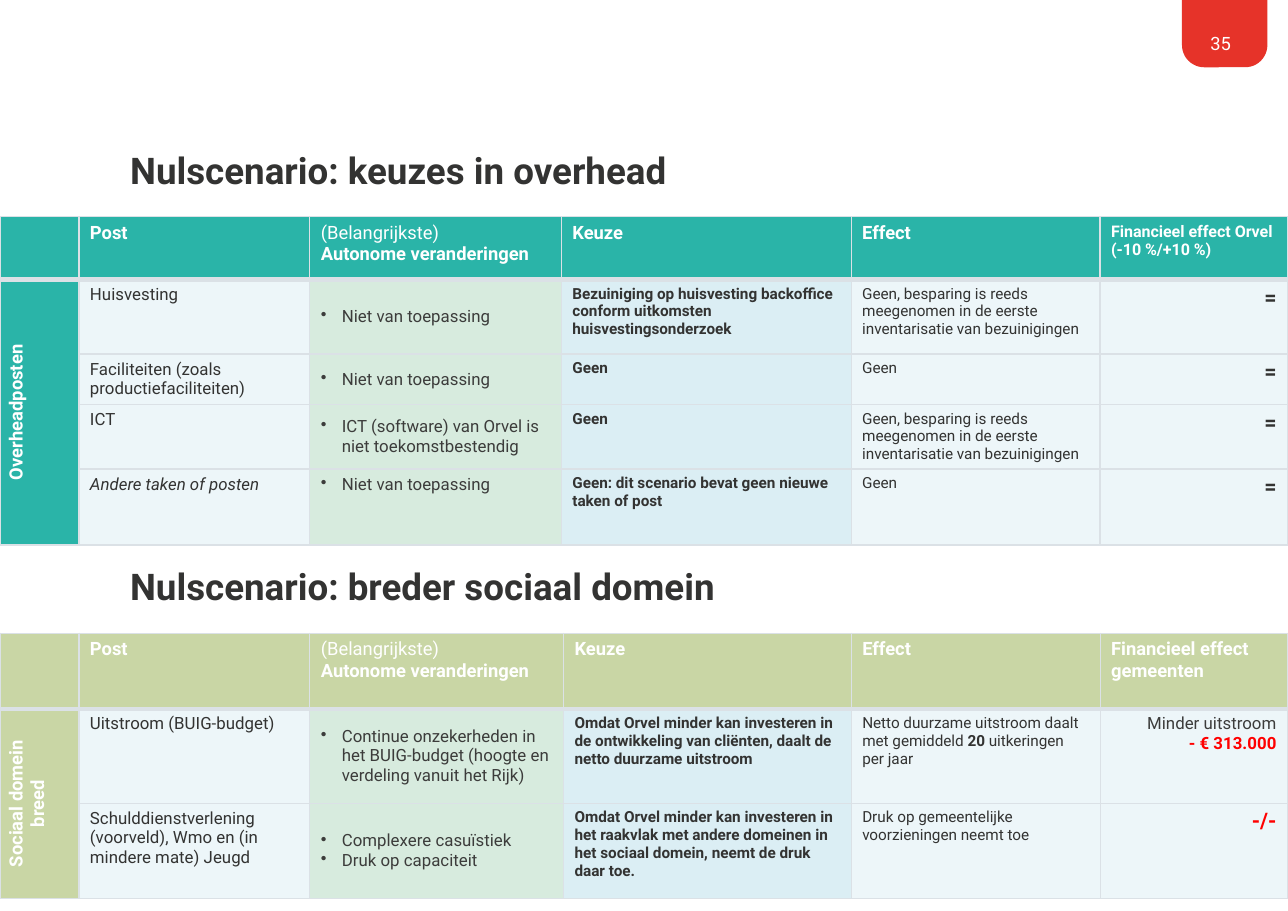
from dataclasses import dataclass

from lxml import etree
from pptx import Presentation, util as u
from pptx.dml.color import RGBColor
from pptx.enum import shapes, text
from pptx.oxml import ns


@dataclass(frozen=True)
class Theme:
    font: str = "Roboto"
    red: str = "E63329"
    loss: str = "FF0000"
    white: str = "FFFFFF"
    ink: str = "333332"
    soft_ink: str = "3C3C3B"
    teal: str = "2AB4A8"
    olive: str = "C9D6A5"
    pale: str = "EDF6F9"
    mint: str = "D7EBDE"
    sky: str = "DBEEF4"
    rule: str = "DBE1E6"
    title: float = 24
    head: float = 12
    small_head: float = 10.5
    item: float = 11
    detail: float = 10
    sign: float = 14


theme = Theme()
LEFT, CENTER, RIGHT = text.PP_ALIGN.LEFT, text.PP_ALIGN.CENTER, text.PP_ALIGN.RIGHT
TOP, MIDDLE, BOTTOM = text.MSO_ANCHOR.TOP, text.MSO_ANCHOR.MIDDLE, text.MSO_ANCHOR.BOTTOM


def write(frame, paras, style):
    """Fill a frame; a para is a string or a list of (text, changes) spans."""
    for index, spans in enumerate(paras):
        para = frame.paragraphs[0] if index == 0 else frame.add_paragraph()
        para.alignment = style.get("align", LEFT)
        if style.get("bullet"):
            props = para._p.get_or_add_pPr()
            props.set("marL", str(u.Pt(13.7)))
            props.set("indent", str(-u.Pt(13.7)))
            etree.SubElement(props, ns.qn("a:buChar")).set("char", "•")
        for wording, changes in [(spans, {})] if isinstance(spans, str) else spans:
            look = style | changes
            span = para.add_run()
            span.text = wording.rstrip("\n")
            if wording.endswith("\n"):
                para.add_line_break()
            values = {"name": theme.font, "size": u.Pt(look["size"]),
                      "bold": look.get("bold", False), "italic": look.get("italic", False)}
            for name, value in values.items():
                setattr(span.font, name, value)
            span.font.color.rgb = RGBColor.from_string(look["color"])


def dress(cell, fill, rules):
    """Give a cell its fill and its left, right, top and bottom rules."""
    cell.fill.solid()
    cell.fill.fore_color.rgb = RGBColor.from_string(fill)
    props = cell._tc.get_or_add_tcPr()
    for index, (side, width) in enumerate(zip("LRTB", rules)):
        line = etree.Element(ns.qn(f"a:ln{side}"), w=str(u.Pt(width)))
        paint = etree.SubElement(line, ns.qn("a:solidFill"))
        etree.SubElement(paint, ns.qn("a:srgbClr")).set("val", theme.rule)
        props.insert(index, line)


# Column looks
head_style = {"size": theme.head, "color": theme.white, "bold": True}
side_style = head_style | {"align": CENTER}
column_styles = [
    {"size": theme.item, "color": theme.ink, "fill": theme.pale},
    {"size": theme.item, "color": theme.soft_ink, "fill": theme.mint,
     "bullet": True, "anchor": MIDDLE},
    {"size": theme.detail, "color": theme.ink, "fill": theme.sky, "bold": True},
    {"size": theme.detail, "color": theme.ink, "fill": theme.pale},
    {"size": theme.sign, "color": theme.ink, "fill": theme.pale, "bold": True, "align": RIGHT},
]

# Table content: each cell is a list of paragraphs
changes_head = [("(Belangrijkste)\n", {"bold": False}), ("Autonome veranderingen", {})]
no_change = ["Niet van toepassing"]
counted = ["Geen, besparing is reeds meegenomen in de eerste inventarisatie van bezuinigingen"]
none, even = ["Geen"], ["="]

tables = [
    {"top": 141.7, "color": theme.teal, "side": "Overheadposten",
     "widths": [51.6, 150.9, 164.4, 189.4, 162.7, 122.5],
     "heights": [41, 48.7, 33, 42, 49.7],
     "last_head": [[("Financieel effect Orvel (-10 %/+10 %)", {"size": theme.small_head})]],
     "rows": [
         [["Huisvesting"], no_change,
          ["Bezuiniging op huisvesting backoffice conform uitkomsten huisvestingsonderzoek"],
          counted, even],
         [["Faciliteiten (zoals productiefaciliteiten)"], no_change, none, none, even],
         [["ICT"], ["ICT (software) van Orvel is niet toekomstbestendig"], none, counted, even],
         [[[("Andere taken of posten", {"italic": True})]], no_change,
          ["Geen: dit scenario bevat geen nieuwe taken of post"], none, even],
     ],
     "top_anchored": (4, 2)},
    {"top": 414, "color": theme.olive, "side": "Sociaal domein breed",
     "widths": [51.6, 150.9, 165.8, 188, 162.7, 122.5],
     "heights": [49.3, 61.7, 62],
     "last_head": ["Financieel effect gemeenten"],
     "rows": [
         [["Uitstroom (BUIG-budget)"],
          ["Continue onzekerheden in het BUIG-budget (hoogte en verdeling vanuit het Rijk)"],
          ["Omdat Orvel minder kan investeren in de ontwikkeling van cliënten, "
           "daalt de netto duurzame uitstroom"],
          [[("Netto duurzame uitstroom daalt met gemiddeld ", {}), ("20", {"bold": True}),
            (" uitkeringen per jaar", {})]],
          [[("Minder uitstroom\n",
             {"size": theme.item, "color": theme.soft_ink, "bold": False}),
            ("- € 313.000", {"size": theme.item, "color": theme.loss})]]],
         [["Schulddienstverlening (voorveld), Wmo en (in mindere mate) Jeugd"],
          ["Complexere casuïstiek", "Druk op capaciteit"],
          ["Omdat Orvel minder kan investeren in het raakvlak met andere domeinen "
           "in het sociaal domein, neemt de druk daar toe."],
          ["Druk op gemeentelijke voorzieningen neemt toe"],
          [[("-/-", {"color": theme.loss})]]],
     ],
     "top_anchored": None},
]

# Page
deck = Presentation()
deck.slide_width, deck.slide_height = u.Pt(841.68), u.Pt(595.44)
page = deck.slides.add_slide(deck.slide_layouts[5])

# Red page tab, rounded at the bottom
tab = page.shapes.add_shape(shapes.MSO_SHAPE.ROUND_2_SAME_RECTANGLE,
                            u.Pt(772.4), 0, u.Pt(55.8), u.Pt(44))
tab.adjustments[0], tab.adjustments[1] = 0, 0.33
tab.shadow.inherit = False
tab.fill.solid()
tab.fill.fore_color.rgb = RGBColor.from_string(theme.red)
tab.line.fill.background()

# Titles and page number
title_style = {"size": theme.title, "color": theme.ink, "bold": True}
number_style = {"size": theme.head, "color": theme.white, "align": CENTER}
second_title = page.shapes.add_textbox(0, 0, 0, 0)
number = page.shapes.add_textbox(0, 0, 0, 0)
for box, place, anchor, wording, style in [
    (page.shapes.title, (85, 73.5, 674.6, 51.8), BOTTOM,
     "Nulscenario: keuzes in overhead", title_style),
    (second_title, (85, 345.6, 674.6, 51.8), BOTTOM,
     "Nulscenario: breder sociaal domein", title_style),
    (number, (779, 20.9, 37.4, 25.9), TOP, "35", number_style),
]:
    for name, value in zip(("left", "top", "width", "height"), place):
        setattr(box, name, u.Pt(value))
    frame = box.text_frame
    values = {"word_wrap": True, "auto_size": text.MSO_AUTO_SIZE.NONE, "vertical_anchor": anchor,
              "margin_left": 0, "margin_right": 0, "margin_top": 0, "margin_bottom": 0}
    for name, value in values.items():
        setattr(frame, name, value)
    write(frame, [wording], style)

# Scenario tables
for data in tables:
    widths, heights = data["widths"], data["heights"]
    grid = page.shapes.add_table(len(heights), len(widths), 0, u.Pt(data["top"]),
                                 u.Pt(sum(widths)), u.Pt(sum(heights))).table
    grid.horz_banding = grid.first_row = False
    for column, width in zip(grid.columns, widths):
        column.width = u.Pt(width)
    for row, height in zip(grid.rows, heights):
        row.height = u.Pt(height)

    # Fills and rules, with a heavier rule under the header
    for r in range(len(heights)):
        for c in range(len(widths)):
            fill = data["color"] if r == 0 or c == 0 else column_styles[c - 1]["fill"]
            dress(grid.cell(r, c), fill, (1, 1, 3 if r == 1 else 1, 3 if r == 0 else 1))

    # Header row and upright side label
    heads = [["Post"], [changes_head], ["Keuze"], ["Effect"], data["last_head"]]
    for c, paras in enumerate(heads, 1):
        write(grid.cell(0, c).text_frame, paras, head_style)
    side = grid.cell(1, 0)
    side.merge(grid.cell(len(heights) - 1, 0))
    side._tc.get_or_add_tcPr().set("vert", "vert270")
    write(side.text_frame, [data["side"]], side_style)

    # Body
    for r, row in enumerate(data["rows"], 1):
        for c, (paras, style) in enumerate(zip(row, column_styles), 1):
            cell = grid.cell(r, c)
            top_anchored = (r, c) == data["top_anchored"]
            cell.vertical_anchor = TOP if top_anchored else style.get("anchor", TOP)
            write(cell.text_frame, paras, style)

deck.save("out.pptx")
